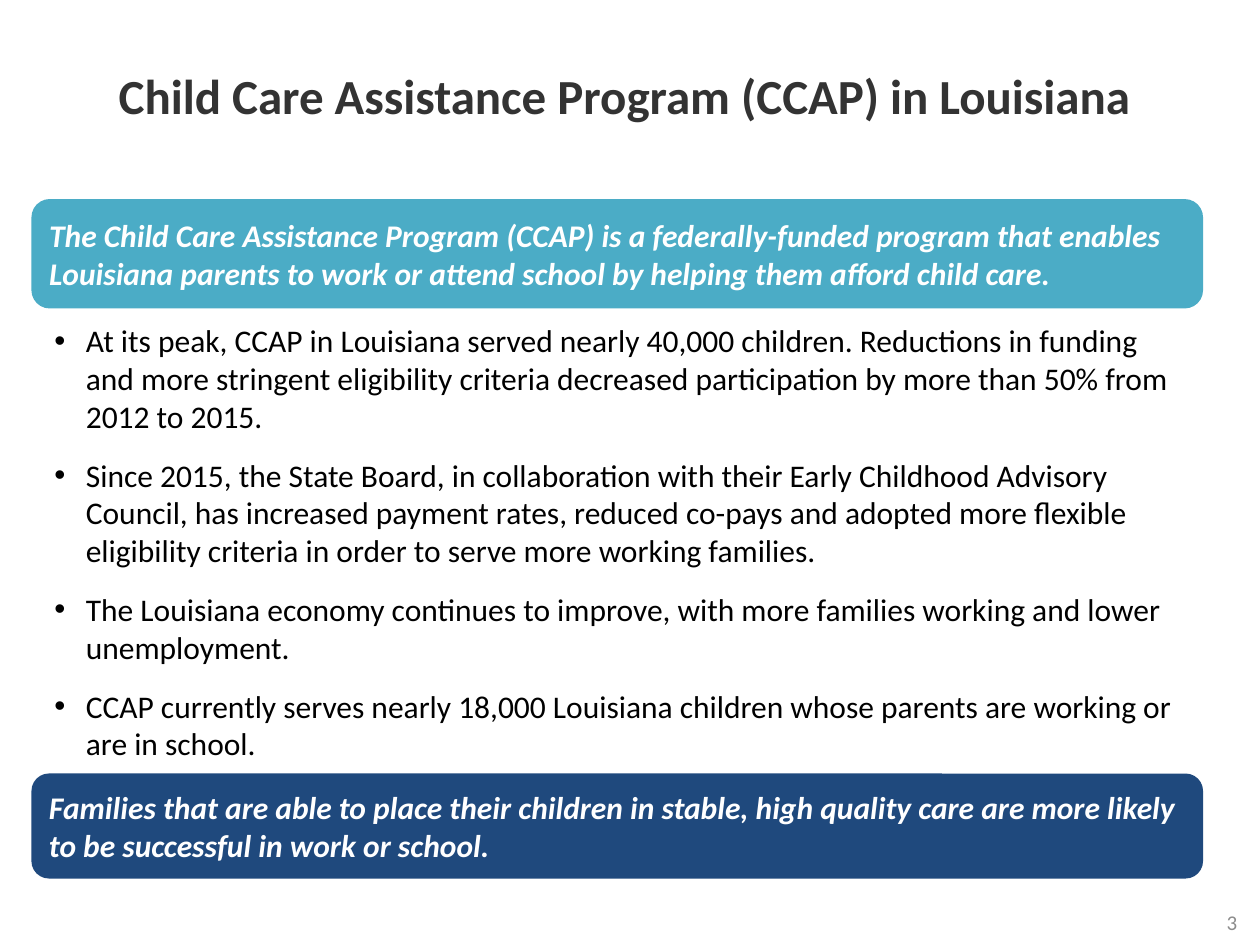
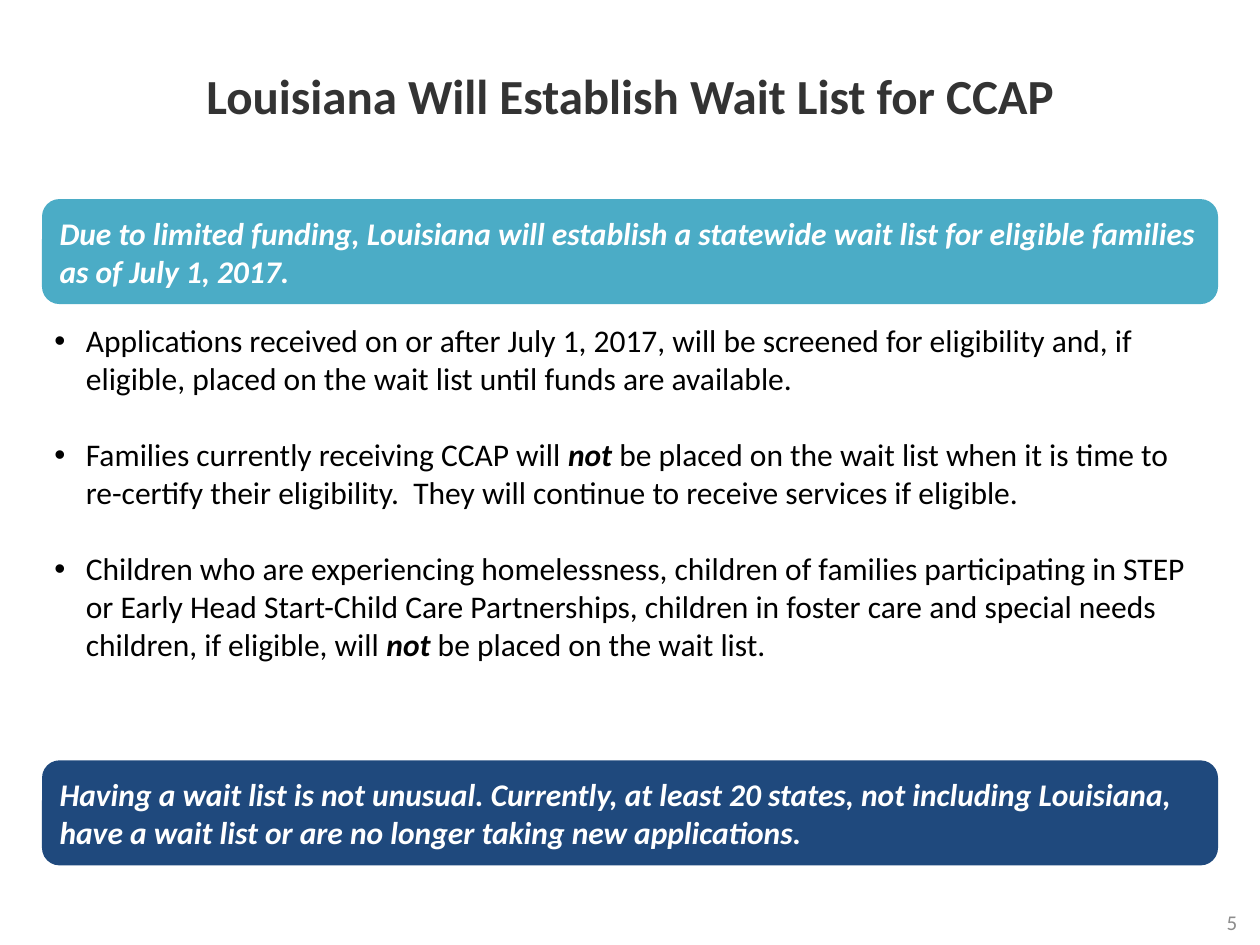
"""Builds two slides on the Child Care Assistance Program in Louisiana."""
from lxml.etree import SubElement
from pptx import Presentation
from pptx.dml.color import RGBColor
from pptx.enum.shapes import MSO_SHAPE as Shape
from pptx.enum.text import MSO_ANCHOR as Anchor, PP_ALIGN as Align
from pptx.oxml.ns import qn
from pptx.util import Pt

SLIDES = [
    {
        "title": "Child Care Assistance Program (CCAP) in Louisiana ",
        "intro": "The Child Care Assistance Program (CCAP) is a federally-funded program that enables "
                 "Louisiana parents to work or attend school by helping them afford child care.",
        "points": [
            ["At its peak, CCAP in Louisiana served nearly 40,000 children. Reductions in funding and more "
             "stringent eligibility criteria decreased participation by more than 50% from 2012 to 2015."],
            ["Since 2015, the State Board, in collaboration with their Early Childhood Advisory Council, has "
             "increased payment rates, reduced co-pays and adopted more flexible eligibility criteria in "
             "order to serve more working families."],
            ["The Louisiana economy continues to improve, with more families working and lower unemployment."],
            ["CCAP currently serves nearly 18,000 Louisiana children whose parents are working or are in school."],
        ],
        "takeaway": "Families that are able to place their children in stable, high quality care are more "
                    "likely to be successful in work or school.",
        "number": "3",
        "band_left": 18, "band_width": 669.5, "intro_height": 62.5, "takeaway_top": 442,
        "points_width": 664, "points_height": 264, "point_gap": 12,
    },
    {
        "title": "Louisiana Will Establish Wait List for CCAP",
        "intro": "Due to limited funding, Louisiana will establish a statewide wait list for eligible "
                 "families as of July 1, 2017.",
        "points": [
            ["Applications received on or after July 1, 2017, will be screened for eligibility and, if "
             "eligible, placed on the wait list until funds are available."],
            ["Families currently receiving CCAP will ", "not ",
             "be placed on the wait list when it is time to re-certify their eligibility.  They will "
             "continue to receive services if eligible."],
            ["Children who are experiencing homelessness, children of families participating in STEP or "
             "Early Head Start-Child Care Partnerships, children in foster care and special needs children, "
             "if eligible, will ", "not", " be placed on the wait list."],
        ],
        "takeaway": "Having a wait list is not unusual. Currently, at least 20 states, not including "
                    "Louisiana, have a wait list or are no longer taking new applications.",
        "number": "5",
        "band_left": 24, "band_width": 672, "intro_height": 60, "takeaway_top": 434.5,
        "points_width": 672, "points_height": 342, "point_gap": 22,
    },
]

SLIDE_WIDTH, SLIDE_HEIGHT = 720, 540
INTRO_TOP, TAKEAWAY_HEIGHT = 113.75, 60
POINTS_LEFT, POINTS_TOP, POINT_INDENT = 24, 180, 18
FONT = "Calibri"
TEAL = RGBColor(0x4B, 0xAC, 0xC6)
NAVY = RGBColor(0x1F, 0x49, 0x7D)
CHARCOAL = RGBColor(0x33, 0x33, 0x33)
GRAY = RGBColor(0x8C, 0x8C, 0x8C)
BLACK = RGBColor(0, 0, 0)
WHITE = RGBColor(0xFF, 0xFF, 0xFF)


def add_run(paragraph, text, size, color, bold=False, italic=False):
    run = paragraph.add_run()
    run.text = text
    font = run.font
    font.name, font.size, font.bold, font.italic = FONT, Pt(size), bold, italic
    font.color.rgb = color


def add_box(slide, left, top, width, height, anchor=Anchor.MIDDLE):
    frame = slide.shapes.add_textbox(Pt(left), Pt(top), Pt(width), Pt(height)).text_frame
    frame.word_wrap = True
    frame.vertical_anchor = anchor
    return frame


def add_line(slide, place, text, size, color, align, bold=False):
    paragraph = add_box(slide, *place).paragraphs[0]
    paragraph.alignment = align
    add_run(paragraph, text, size, color, bold)


def add_band(slide, content, top, height, text, color):
    band = slide.shapes.add_shape(Shape.ROUNDED_RECTANGLE, Pt(content["band_left"]), Pt(top),
                                  Pt(content["band_width"]), Pt(height))
    band.shadow.inherit = False
    band.fill.solid()
    band.fill.fore_color.rgb = color
    band.line.fill.background()
    band.text_frame.vertical_anchor = Anchor.MIDDLE
    paragraph = band.text_frame.paragraphs[0]
    paragraph.alignment = Align.LEFT
    add_run(paragraph, text, 18, WHITE, bold=True, italic=True)


def add_bullet(paragraph):
    properties = paragraph._p.get_or_add_pPr()
    properties.set("marL", str(Pt(POINT_INDENT)))
    properties.set("indent", str(-Pt(POINT_INDENT)))
    SubElement(properties, qn("a:buFont"), typeface="Arial")
    SubElement(properties, qn("a:buChar"), char="•")


def add_points(slide, content):
    frame = add_box(slide, POINTS_LEFT, POINTS_TOP, content["points_width"],
                    content["points_height"], Anchor.TOP)
    for index, pieces in enumerate(content["points"]):
        paragraph = frame.add_paragraph() if index else frame.paragraphs[0]
        add_bullet(paragraph)
        if index:
            paragraph.space_before = Pt(content["point_gap"])
        for piece in pieces:
            stressed = piece.strip() == "not"
            add_run(paragraph, piece, 18, BLACK, stressed, stressed)


def build_slide(deck, content):
    slide = deck.slides.add_slide(deck.slide_layouts[6])
    add_points(slide, content)
    add_line(slide, (0, 0, SLIDE_WIDTH, 108), content["title"], 28, CHARCOAL, Align.CENTER, bold=True)
    add_band(slide, content, INTRO_TOP, content["intro_height"], content["intro"], TEAL)
    add_line(slide, (546, 513.5, 168, 26.5), content["number"], 12, GRAY, Align.RIGHT)
    add_band(slide, content, content["takeaway_top"], TAKEAWAY_HEIGHT, content["takeaway"], NAVY)


def main():
    deck = Presentation()
    deck.slide_width, deck.slide_height = Pt(SLIDE_WIDTH), Pt(SLIDE_HEIGHT)
    for content in SLIDES:
        build_slide(deck, content)
    deck.save("out.pptx")


if __name__ == "__main__":
    main()
